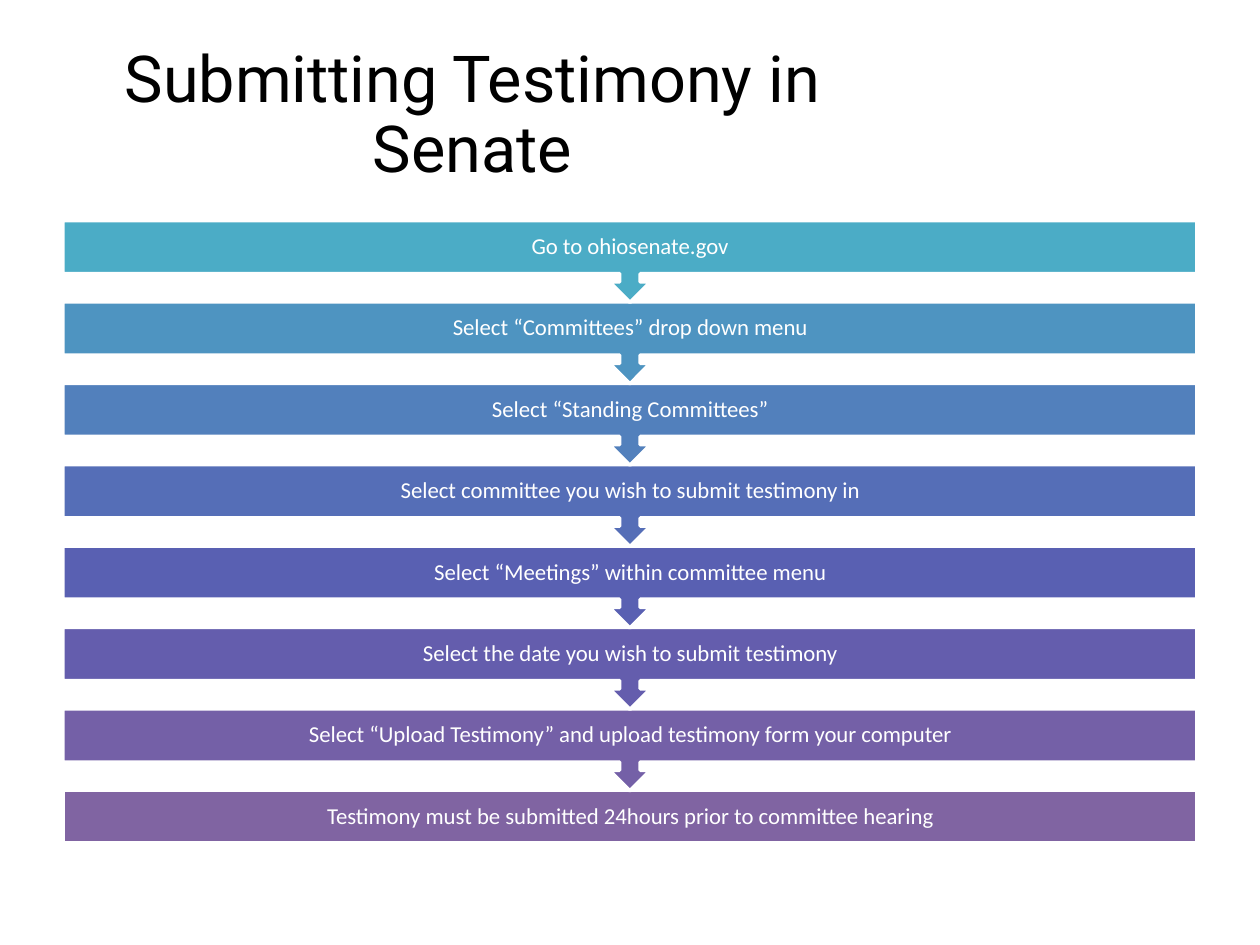
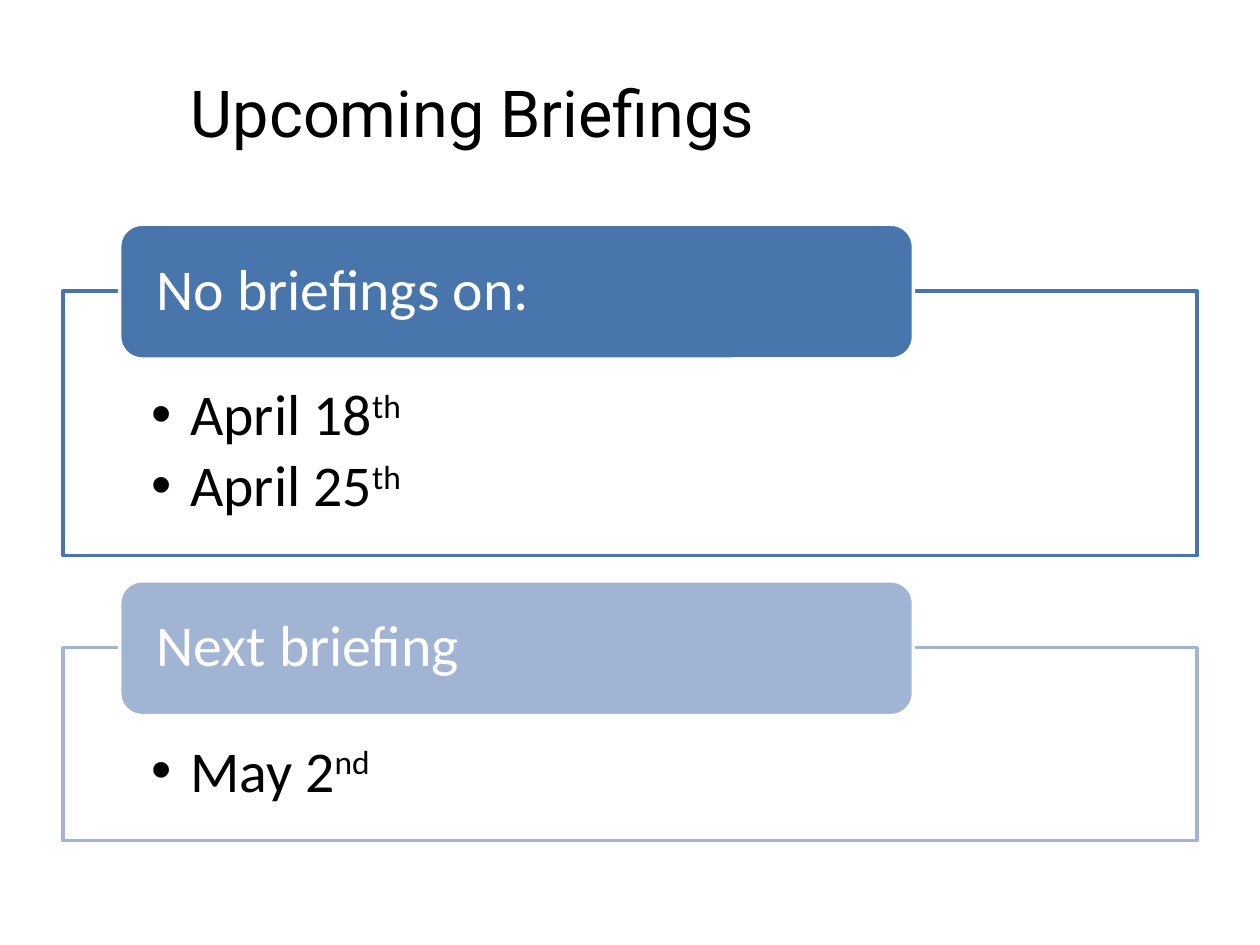
"""Build two slides on Senate testimony steps and upcoming briefings."""
from dataclasses import dataclass

from pptx import Presentation
from pptx.dml.color import RGBColor
from pptx.enum.shapes import MSO_SHAPE as Kind
from pptx.enum.text import MSO_ANCHOR as Anchor, MSO_AUTO_SIZE as Fit, PP_ALIGN as Align
from pptx.util import Inches, Pt

COLORS = {
    "black": "000000", "white": "FFFFFF",
    "aqua": "4BACC6", "sky": "4E94C1", "azure": "5280BC", "blue": "556EB7",
    "indigo": "5960B2", "violet": "645DAD", "purple": "7460A7", "plum": "8064A2",
    "steel": "4875AC", "mist": "A2B4D4",
}
LEFT, WIDTH = 0.5, 9
STEP_TOP, STEP_GAP = 1.75, 0.646
CALL_H, LAST_H = 0.65, 0.42
HEAD_H, HEAD_RISE = 1.07, 0.53


@dataclass
class Step:
    text: str
    color: str


@dataclass
class Panel:
    head: str
    dates: list[tuple[str, str]]
    top: float
    height: float
    color: str


STEPS = [
    Step("Go to ohiosenate.gov", "aqua"),
    Step("Select “Committees” drop down menu", "sky"),
    Step("Select “Standing Committees”", "azure"),
    Step("Select committee you wish to submit testimony in", "blue"),
    Step("Select “Meetings” within committee menu", "indigo"),
    Step("Select the date you wish to submit testimony", "violet"),
    Step("Select “Upload Testimony” and upload testimony form your computer", "purple"),
    Step("Testimony must be submitted 24hours prior to committee hearing", "plum"),
]
PANELS = [
    Panel("No briefings on:", [("April 18", "th"), ("April 25", "th")], 2.31, 2.1, "steel"),
    Panel("Next briefing", [("May 2", "nd")], 5.14, 1.53, "mist"),
]


def tint(name: str) -> RGBColor:
    """Return a named colour."""
    return RGBColor.from_string(COLORS[name])


def place(shape, left: float, top: float, width: float, height: float) -> None:
    """Move and size a shape in inches."""
    shape.left, shape.top = Inches(left), Inches(top)
    shape.width, shape.height = Inches(width), Inches(height)


def paint(shape, fill: str, line: str) -> None:
    """Set the fill and outline of a shape."""
    shape.fill.solid()
    shape.fill.fore_color.rgb = tint(fill)
    shape.line.color.rgb = tint(line)
    shape.line.width = Pt(2)


def inset(frame, left: float, top: float, right: float, bottom: float) -> None:
    """Set text margins in inches and keep the text size fixed."""
    frame.margin_left, frame.margin_top = Inches(left), Inches(top)
    frame.margin_right, frame.margin_bottom = Inches(right), Inches(bottom)
    frame.word_wrap = True
    frame.auto_size = Fit.NONE


def style(para, size: float, color: str, align=Align.LEFT, face: str = "Calibri") -> None:
    """Format a paragraph and all its runs."""
    para.alignment = align
    para.line_spacing = 0.9
    para.space_before = Pt(0)
    for run in para.runs:
        run.font.size = Pt(size)
        run.font.name = face
        run.font.color.rgb = tint(color)


def block(slide, kind, box: tuple[float, ...], color: str, text: str):
    """Add a filled shape with a white outline and text."""
    shape = slide.shapes.add_shape(kind, *map(Inches, box))
    shape.shadow.inherit = False
    paint(shape, color, "white")
    shape.text_frame.text = text
    shape.text_frame.vertical_anchor = Anchor.MIDDLE
    return shape


def start(deck, layout: str, title: str):
    """Add a slide with the shared title style."""
    slide = deck.slides.add_slide(deck.slide_layouts.get_by_name(layout))
    head = slide.shapes.title
    place(head, LEFT, 0.3, 6.5, 1.25)
    frame = head.text_frame
    frame.text = title
    inset(frame, 0.1, 0.05, 0.1, 0.05)
    frame.vertical_anchor = Anchor.MIDDLE
    style(frame.paragraphs[0], 37, "black", Align.CENTER, "Roboto")
    return slide


def draw_steps(slide) -> None:
    """Stack the steps from the last one up to the first."""
    last = len(STEPS) - 1
    for index, step in reversed(list(enumerate(STEPS))):
        end = index == last
        kind = Kind.RECTANGLE if end else Kind.DOWN_ARROW_CALLOUT
        box = (LEFT, STEP_TOP + index * STEP_GAP, WIDTH, LAST_H if end else CALL_H)
        shape = block(slide, kind, box, step.color, step.text)
        inset(shape.text_frame, 0.1, 0.1, 0.1, 0.1)
        style(shape.text_frame.paragraphs[0], 13, "white", Align.CENTER)


def draw_panel(slide, panel: Panel, body) -> None:
    """Format a list panel and add its heading tab."""
    place(body, LEFT, panel.top, WIDTH, panel.height)
    paint(body, "white", panel.color)
    frame = body.text_frame
    inset(frame, 0.7, 0.75, 0.7, 0.26)
    frame.vertical_anchor = Anchor.TOP
    for index, (day, suffix) in enumerate(panel.dates):
        para = frame.add_paragraph() if index else frame.paragraphs[0]
        para.text = day
        run = para.add_run()
        run.text = suffix
        run.font._element.set("baseline", "30000")
        props = para._p.get_or_add_pPr()
        props.set("marL", str(Inches(0.31)))
        props.set("indent", str(Inches(-0.31)))
        style(para, 33, "black")
        para.space_after = Pt(5)
    box = (0.95, panel.top - HEAD_RISE, 6.3, HEAD_H)
    head = block(slide, Kind.ROUNDED_RECTANGLE, box, panel.color, panel.head)
    inset(head.text_frame, 0.24, 0, 0.24, 0)
    style(head.text_frame.paragraphs[0], 33, "white")


def main() -> None:
    """Build and save the deck."""
    deck = Presentation()
    deck.slide_width, deck.slide_height = Inches(10), Inches(7.5)
    draw_steps(start(deck, "Title Only", "Submitting Testimony in Senate"))
    slide = start(deck, "Two Content", "Upcoming Briefings")
    bodies = list(slide.placeholders)[1:]
    for panel, body in zip(PANELS, bodies):
        draw_panel(slide, panel, body)
    deck.save("out.pptx")


if __name__ == "__main__":
    main()
